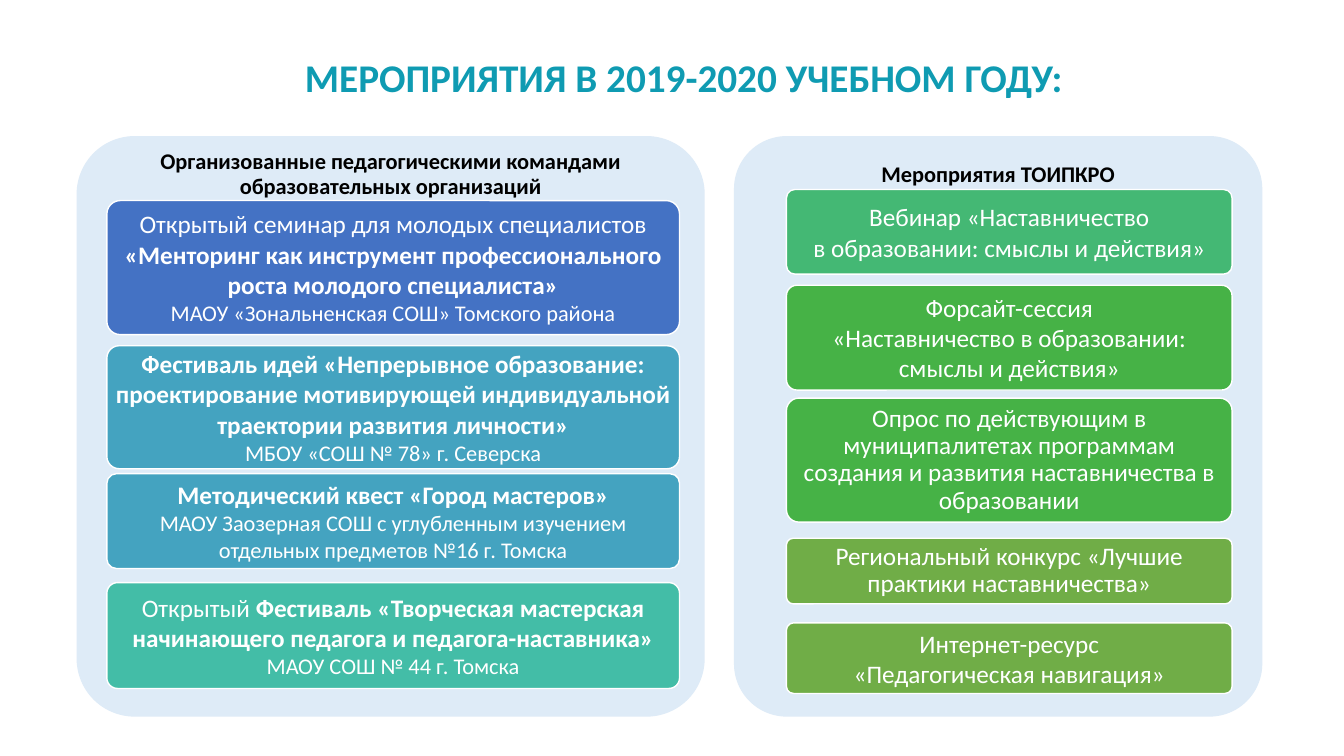
from pptx import Presentation
from pptx.dml.color import RGBColor
from pptx.enum.shapes import MSO_SHAPE
from pptx.enum.text import MSO_ANCHOR, PP_ALIGN
from pptx.util import Inches, Pt

TITLE = "МЕРОПРИЯТИЯ В 2019-2020 УЧЕБНОМ ГОДУ:"
PANEL_TOP, PANEL_HEIGHT = 1.35, 5.76
LARGE, SMALL = 18, 16

PANELS = [
    {
        "heading": "Организованные педагогическими командами образовательных организаций",
        "left": 0.76, "width": 6.23, "card_left": 1.06, "card_width": 5.68,
        "cards": [
            (1.99, 1.33, "4472C4", 1, [
                [("Открытый семинар для молодых специалистов ", LARGE, False),
                 ("«Менторинг как инструмент профессионального роста молодого специалиста»", LARGE, True)],
                [("МАОУ «Зональненская СОШ» Томского района", SMALL, False)]]),
            (3.43, 1.22, "44A3C0", 1, [
                [("Фестиваль идей «Непрерывное образование: проектирование мотивирующей "
                  "индивидуальной траектории развития личности»", LARGE, True)],
                [("МБОУ «СОШ № 78» г. Северска", SMALL, False)]]),
            (4.7, 0.94, "44A3C0", 1, [
                [("Методический квест «Город мастеров»", LARGE, True)],
                [("МАОУ Заозерная СОШ с углубленным изучением отдельных предметов №16 г. Томска",
                  SMALL, False)]]),
            (5.78, 1.05, "43BDA7", 1, [
                [("Открытый ", LARGE, False),
                 ("Фестиваль «Творческая мастерская начинающего педагога и педагога-наставника»",
                  LARGE, True)],
                [("МАОУ СОШ № 44 г. Томска", SMALL, False)]]),
        ],
    },
    {
        "heading": "Мероприятия ТОИПКРО",
        "left": 7.28, "width": 5.24, "card_left": 7.8, "card_width": 4.42,
        "cards": [
            (1.88, 0.84, "44B874", 1, [
                [("Вебинар «Наставничество", LARGE, False)],
                [("в образовании: смыслы и действия»", LARGE, False)]]),
            (2.83, 1.04, "46B246", 1, [
                [("Форсайт-сессия", LARGE, False)],
                [("«Наставничество в образовании: смыслы и действия»", LARGE, False)]]),
            (3.95, 1.23, "46B246", 0.9, [
                [("Опрос по действующим в муниципалитетах программам создания и развития "
                  "наставничества в образовании", LARGE, False)]]),
            (5.34, 0.65, "70AD47", 0.9, [
                [("Региональный конкурс «Лучшие практики наставничества»", LARGE, False)]]),
            (6.18, 0.7, "70AD47", 1, [
                [("Интернет-ресурс", LARGE, False)],
                [("«Педагогическая навигация»", LARGE, False)]]),
        ],
    },
]


def color(value):
    return RGBColor.from_string(value)


def write(frame, paragraphs, text_color, spacing, insets):
    frame.word_wrap = True
    frame.vertical_anchor = MSO_ANCHOR.MIDDLE
    (frame.margin_left, frame.margin_top,
     frame.margin_right, frame.margin_bottom) = map(Inches, insets)
    for index, parts in enumerate(paragraphs):
        paragraph = frame.add_paragraph() if index else frame.paragraphs[0]
        paragraph.alignment = PP_ALIGN.CENTER
        paragraph.line_spacing = float(spacing)
        for words, size, bold in parts:
            run = paragraph.add_run()
            run.text = words
            run.font.name = "Calibri"
            run.font.size = Pt(size)
            run.font.bold = bold
            run.font.color.rgb = color(text_color)


def add_rounded(left, top, width, height, fill, outline=None):
    box = slide.shapes.add_shape(MSO_SHAPE.ROUNDED_RECTANGLE,
                                 *map(Inches, (left, top, width, height)))
    box.adjustments[0] = 0.1
    box.shadow.inherit = False
    box.fill.solid()
    box.fill.fore_color.rgb = color(fill)
    if outline:
        box.line.color.rgb = color(outline)
        box.line.width = Pt(1)
    else:
        box.line.fill.background()
    return box.text_frame


presentation = Presentation()
presentation.slide_width, presentation.slide_height = Inches(13.33), Inches(7.5)
slide = presentation.slides.add_slide(presentation.slide_layouts[6])

title = slide.shapes.add_textbox(*map(Inches, (0.76, 0.22, 12.04, 1.14)))
write(title.text_frame, [[(TITLE, 28, True)]], "0F9BB2", 0.9, (0.1, 0.05, 0.1, 0.05))

for panel in PANELS:
    heading = add_rounded(panel["left"], PANEL_TOP, panel["width"], PANEL_HEIGHT, "DEEBF7")
    write(heading, [[(panel["heading"], SMALL, True)]], "000000", 0.9, (0.07, 0, 0.07, 4.99))
    for top, height, fill, spacing, paragraphs in panel["cards"]:
        card = add_rounded(panel["card_left"], top, panel["card_width"], height, fill, "FFFFFF")
        write(card, paragraphs, "FFFFFF", spacing, (0.03, 0.02, 0.03, 0.02))

presentation.save("out.pptx")
